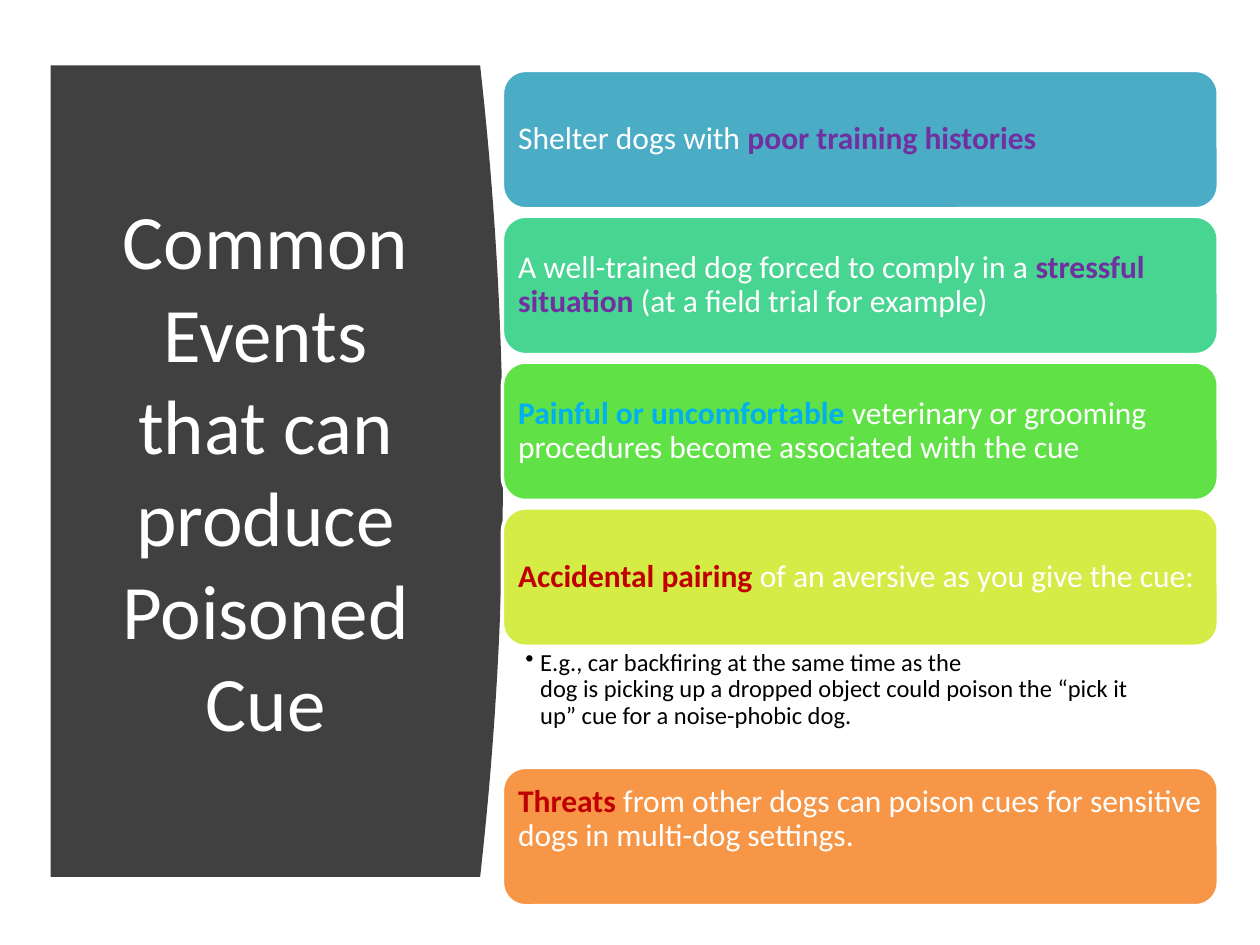
import pptx
import pptx.dml.color
import pptx.enum.shapes
import pptx.enum.text
import pptx.oxml.ns
import pptx.util
from lxml import etree

Cm = pptx.util.Cm
Pt = pptx.util.Pt
ANCHOR = pptx.enum.text.MSO_ANCHOR
ALIGN = pptx.enum.text.PP_ALIGN
COLORS = {
    "panel": "404040", "white": "FFFFFF", "black": "000000",
    "purple": "7030A0", "sky": "00B0F0", "red": "C00000",
    "blue": "4BACC6", "mint": "48D491", "green": "60E146",
    "lime": "D5EC46", "orange": "F79646",
}


def rgb(name):
    return pptx.dml.color.RGBColor.from_string(COLORS[name])


def add_run(paragraph, text, size, color, bold=False):
    run = paragraph.add_run()
    run.text = text
    run.font.name = "Calibri"
    run.font.size = Pt(size)
    run.font.bold = bold
    run.font.color.rgb = rgb(color)


presentation = pptx.Presentation()
presentation.slide_width = Cm(25.4)
presentation.slide_height = Cm(19.05)
slide = presentation.slides.add_slide(presentation.slide_layouts[6])

# Dark panel whose right edge bulges as a parabola
left, top, bottom = 1.02, 1.32, 17.68
edge, bulge, steps = 9.68, 0.46, 40
points = []
for step in range(steps + 1):
    across = 2 * step / steps - 1
    y = top + (bottom - top) * step / steps
    points.append((Cm(edge + bulge * (1 - across ** 2)), Cm(y)))
builder = slide.shapes.build_freeform(Cm(left), Cm(top), scale=1.0)
builder.add_line_segments(points + [(Cm(left), Cm(bottom))], close=True)
panel = builder.convert_to_shape()
panel.shadow.inherit = False
panel.fill.solid()
panel.fill.fore_color.rgb = rgb("panel")
panel.line.fill.background()

# Title
title = slide.shapes.add_textbox(Cm(1.8), Cm(2.82), Cm(7.11), Cm(13.31))
title.text_frame.word_wrap = True
title.text_frame.vertical_anchor = ANCHOR.MIDDLE
paragraph = title.text_frame.paragraphs[0]
paragraph.alignment = ALIGN.CENTER
add_run(paragraph, "Common Events that can produce Poisoned Cue", 44, "white")

# Cards: fill, space below, bottom inset, runs of text, colour and weight
card_left, card_width, card_height = 10.13, 14.43, 2.79
gap, example_height, inset = 0.15, 2.44, 0.18
cards = [
    ("blue", gap, inset, [("Shelter dogs with ", "white", False),
                          ("poor training histories", "purple", True)]),
    ("mint", gap, inset, [("A well-trained dog forced to comply in a ", "white", False),
                          ("stressful situation ", "purple", True),
                          ("(at a field trial for example)", "white", False)]),
    ("green", gap, inset, [("Painful or uncomfortable ", "sky", True),
                           ("veterinary or grooming procedures become "
                            "associated with the cue", "white", False)]),
    ("lime", example_height, inset, [("Accidental pairing ", "red", True),
                                     ("of an aversive as you give the cue:", "white", False)]),
    ("orange", 0, 0.87, [("Threats ", "red", True),
                         ("from other dogs can poison cues for sensitive dogs "
                          "in multi-dog settings.", "white", False)]),
]
card_top = 1.42
for fill, space_below, bottom_inset, runs in cards:
    card = slide.shapes.add_shape(
        pptx.enum.shapes.MSO_SHAPE.ROUNDED_RECTANGLE,
        Cm(card_left), Cm(card_top), Cm(card_width), Cm(card_height))
    card.shadow.inherit = False
    card.fill.solid()
    card.fill.fore_color.rgb = rgb(fill)
    card.line.color.rgb = rgb("white")
    card.line.width = Pt(2)
    frame = card.text_frame
    frame.word_wrap = True
    frame.vertical_anchor = ANCHOR.MIDDLE
    frame.margin_left = frame.margin_right = frame.margin_top = Cm(inset)
    frame.margin_bottom = Cm(bottom_inset)
    paragraph = frame.paragraphs[0]
    paragraph.alignment = ALIGN.LEFT
    paragraph.line_spacing = 0.9
    for text, color, bold in runs:
        add_run(paragraph, text, 18, color, bold)
    if space_below == example_height:
        example_top = card_top + card_height
    card_top += card_height + space_below

# Bulleted example under the fourth card
example = slide.shapes.add_textbox(
    Cm(card_left), Cm(example_top), Cm(card_width), Cm(example_height))
frame = example.text_frame
frame.word_wrap = True
frame.margin_left, frame.margin_right = Cm(0.46), Cm(0.36)
frame.margin_top = frame.margin_bottom = Cm(0.08)
paragraph = frame.paragraphs[0]
paragraph.line_spacing = 0.9
lines = [
    "E.g., car backfiring at the same time as the",
    "dog is picking up a dropped object could poison the “pick it",
    "up” cue for a noise-phobic dog.",
]
for index, line in enumerate(lines):
    if index:
        paragraph.add_line_break()
    add_run(paragraph, line, 14, "black")
properties = paragraph._p.get_or_add_pPr()
properties.set("marL", str(Cm(0.3)))
properties.set("indent", str(-Cm(0.3)))
bullet = etree.SubElement(properties, pptx.oxml.ns.qn("a:buChar"))
bullet.set("char", "•")

presentation.save("out.pptx")
